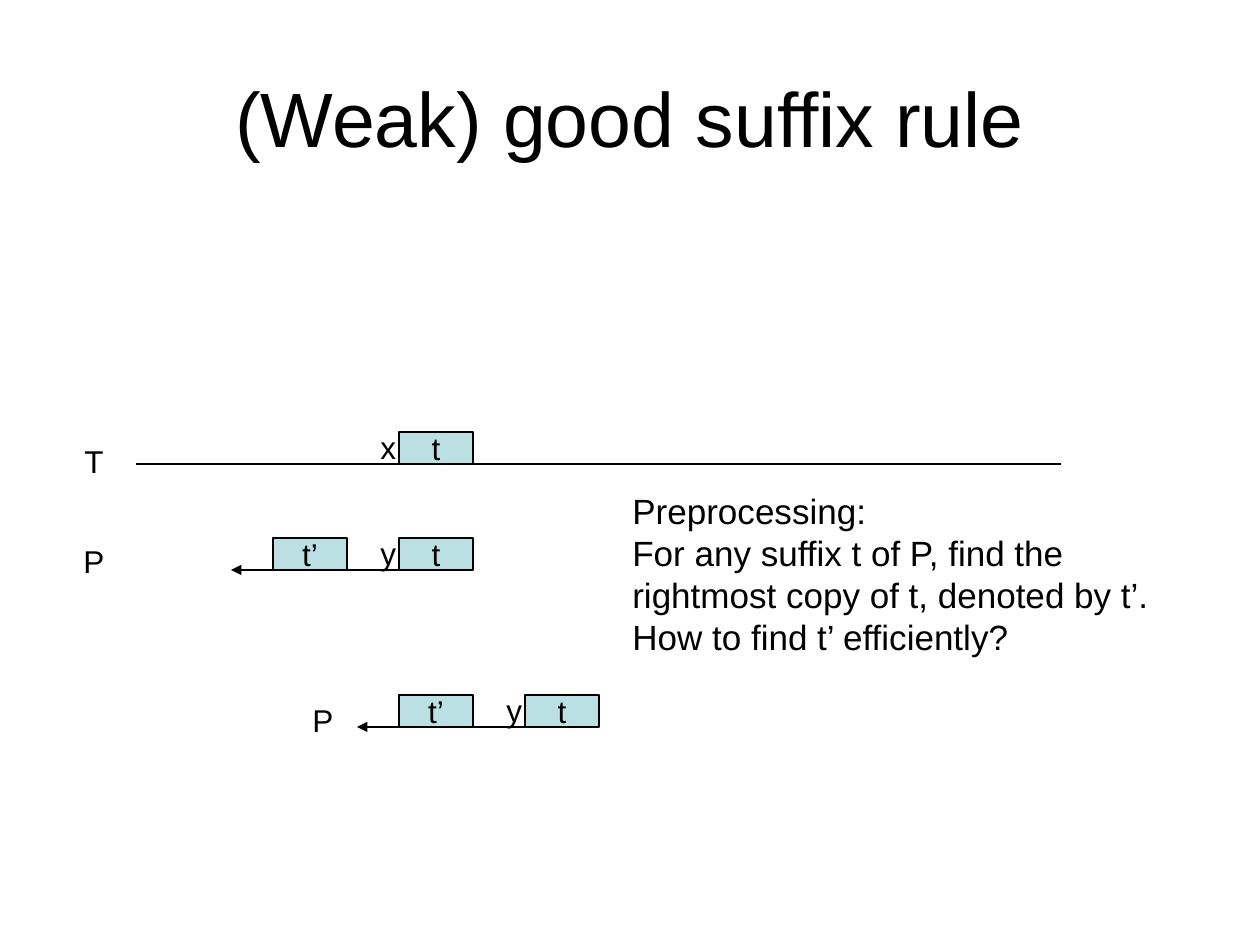
from lxml import etree
from pptx import Presentation, util as u
from pptx.dml.color import RGBColor
from pptx.enum import shapes, text
from pptx.oxml.ns import qn

HUES = {"ink": "000000", "box": "BBE0E3"}
INK = RGBColor.from_string(HUES["ink"])


def px(*nums):
    return [u.Emu(round(n * 914400 / 126)) for n in nums]


def write(shape, lines, size, align=text.PP_ALIGN.LEFT, wrap=False):
    frame = shape.text_frame
    frame.word_wrap = wrap
    frame.text = "\n".join(lines)
    for para in frame.paragraphs:
        para.alignment = align
        para.font.size = u.Pt(size)
        para.font.name = "Arial"
        para.font.color.rgb = INK
    return frame


deck = Presentation()
deck.slide_width, deck.slide_height = px(1260, 945)
slide = deck.slides.add_slide(deck.slide_layouts[5])
items = slide.shapes
mid = text.PP_ALIGN.CENTER

title = items.title
title.left, title.top, title.width, title.height = px(63, 38, 1134, 157)
frame = write(title, ["(Weak) good suffix rule"], 44, mid, True)
frame.vertical_anchor = text.MSO_ANCHOR.MIDDLE

rows = [
    (136, 1061, 464, [("t", 399)], "x", False),
    (231, 473, 570, [("t", 399), ("t’", 273)], "y", True),
    (357, 599, 727, [("t", 525), ("t’", 399)], "y", True),
]
for left, right, base, boxes, mark, arrow in rows:
    line = items.add_connector(shapes.MSO_CONNECTOR.STRAIGHT, *px(left, base, right, base))
    line.line.color.rgb = INK
    line.line.width = u.Pt(0.75)
    if arrow:
        etree.SubElement(line.line._get_or_add_ln(), qn("a:headEnd"), type="triangle")
    etree.SubElement(line._element.spPr, qn("a:effectLst"))
    for word, x in boxes:
        box = items.add_shape(shapes.MSO_SHAPE.RECTANGLE, *px(x, base - 32, 74, 32))
        box.shadow.inherit = False
        box.fill.solid()
        box.fill.fore_color.rgb = RGBColor.from_string(HUES["box"])
        box.line.color.rgb = INK
        box.line.width = u.Pt(0.75)
        write(box, [word], 18, mid).vertical_anchor = text.MSO_ANCHOR.MIDDLE
    spot = items.add_textbox(*px(boxes[0][1] - 31, base - 42, 42, 50))
    write(spot, [mark], 18)

note = items.add_textbox(*px(620, 483, 567, 180))
write(note, [
    "Preprocessing:",
    "For any suffix t of P, find the rightmost copy of t, denoted by t’.",
    "How to find t’ efficiently?",
], 20, wrap=True)

for name, x, y in [("T", 72, 436), ("P", 71, 536), ("P", 300, 695)]:
    write(items.add_textbox(*px(x, y, 46, 50)), [name], 18)

deck.save("out.pptx")
